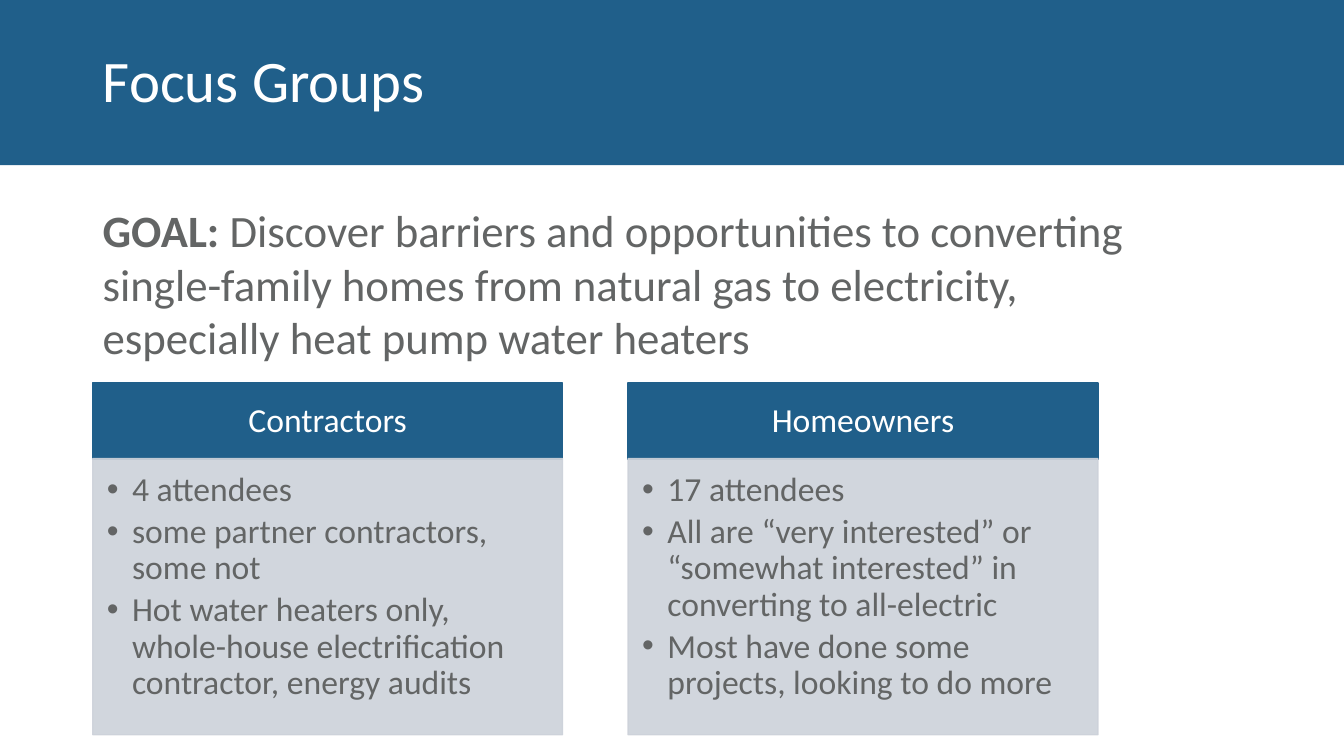
from lxml import etree
from pptx import Presentation
from pptx.dml.color import RGBColor
from pptx.enum.shapes import MSO_SHAPE
from pptx.enum.text import MSO_ANCHOR, PP_ALIGN
from pptx.oxml.ns import qn
from pptx.util import Inches, Pt

COLORS = {"blue": "205F8A", "panel": "CDD2DA", "gray": "636565", "white": "FFFFFF"}

GROUPS = [
    ("Contractors", [
        "4 attendees",
        "some partner contractors, some not",
        "Hot water heaters only, whole-house electrification contractor, energy audits",
    ]),
    ("Homeowners", [
        "17 attendees",
        "All are “very interested” or “somewhat interested” in converting to all-electric",
        "Most have done some projects, looking to do more",
    ]),
]


def add_box(left, top, width, height, color, insets):
    sp = s.shapes.add_shape(MSO_SHAPE.RECTANGLE, Inches(left), Inches(top), Inches(width), Inches(height))
    sp.shadow.inherit = False
    sp.fill.solid()
    sp.fill.fore_color.rgb = RGBColor.from_string(COLORS[color])
    sp.line.color.rgb = RGBColor.from_string(COLORS[color])
    sp.line.width = Pt(1)
    tf = sp.text_frame
    tf.word_wrap = True
    tf.margin_left, tf.margin_top, tf.margin_right, tf.margin_bottom = [Inches(i) for i in insets]
    return sp


def style(p, size, color):
    for r in p.runs:
        r.font.name = "Calibri"
        r.font.size = Pt(size)
        r.font.color.rgb = RGBColor.from_string(COLORS[color])


prs = Presentation()
prs.slide_width, prs.slide_height = Inches(13.33), Inches(7.5)
s = prs.slides.add_slide(prs.slide_layouts[5])

band = add_box(0, 0, 13.33, 1.64, "blue", (0, 0, 0, 0))
band.line.fill.background()
s.shapes._spTree.insert(2, band._element)

title = s.shapes.title
title.left, title.top, title.width, title.height = Inches(0.92), Inches(0.31), Inches(10.66), Inches(1.03)
tf = title.text_frame
tf.text = "Focus Groups"
tf.vertical_anchor = MSO_ANCHOR.MIDDLE
p = tf.paragraphs[0]
p.alignment = PP_ALIGN.LEFT
p.line_spacing = 0.9
style(p, 42, "white")

goal = s.shapes.add_textbox(Inches(0.92), Inches(1.96), Inches(11.06), Inches(2.12))
tf = goal.text_frame
tf.word_wrap = True
p = tf.paragraphs[0]
p.space_after = Pt(4)
r = p.add_run()
r.text = "GOAL: "
r.font.bold = True
r = p.add_run()
r.text = ("Discover barriers and opportunities to converting single-family homes "
          "from natural gas to electricity, especially heat pump water heaters")
style(p, 32, "gray")

for i, (heading, points) in enumerate(GROUPS):
    left = 0.92 + i * 5.31

    header = add_box(left, 3.8, 4.66, 0.76, "blue", (0.19, 0.11, 0.19, 0.11))
    tf = header.text_frame
    tf.text = heading
    tf.vertical_anchor = MSO_ANCHOR.MIDDLE
    p = tf.paragraphs[0]
    p.alignment = PP_ALIGN.CENTER
    p.line_spacing = 0.9
    style(p, 24, "white")

    panel = add_box(left, 4.55, 4.66, 2.74, "panel", (0.14, 0.14, 0.19, 0.21))
    for clr in panel._element.spPr.iter(qn("a:srgbClr")):
        etree.SubElement(clr, qn("a:alpha"), val="90000")
    tf = panel.text_frame
    tf.vertical_anchor = MSO_ANCHOR.TOP
    tf.text = "\n".join(points)
    for p in tf.paragraphs:
        p.alignment = PP_ALIGN.LEFT
        p.line_spacing = 0.9
        p.space_after = Pt(4)
        pPr = p._p.get_or_add_pPr()
        pPr.set("marL", str(Inches(0.25)))
        pPr.set("indent", str(Inches(-0.25)))
        etree.SubElement(pPr, qn("a:buFont"), typeface="Arial")
        etree.SubElement(pPr, qn("a:buChar"), char="•")
        style(p, 24, "gray")

prs.save("out.pptx")
